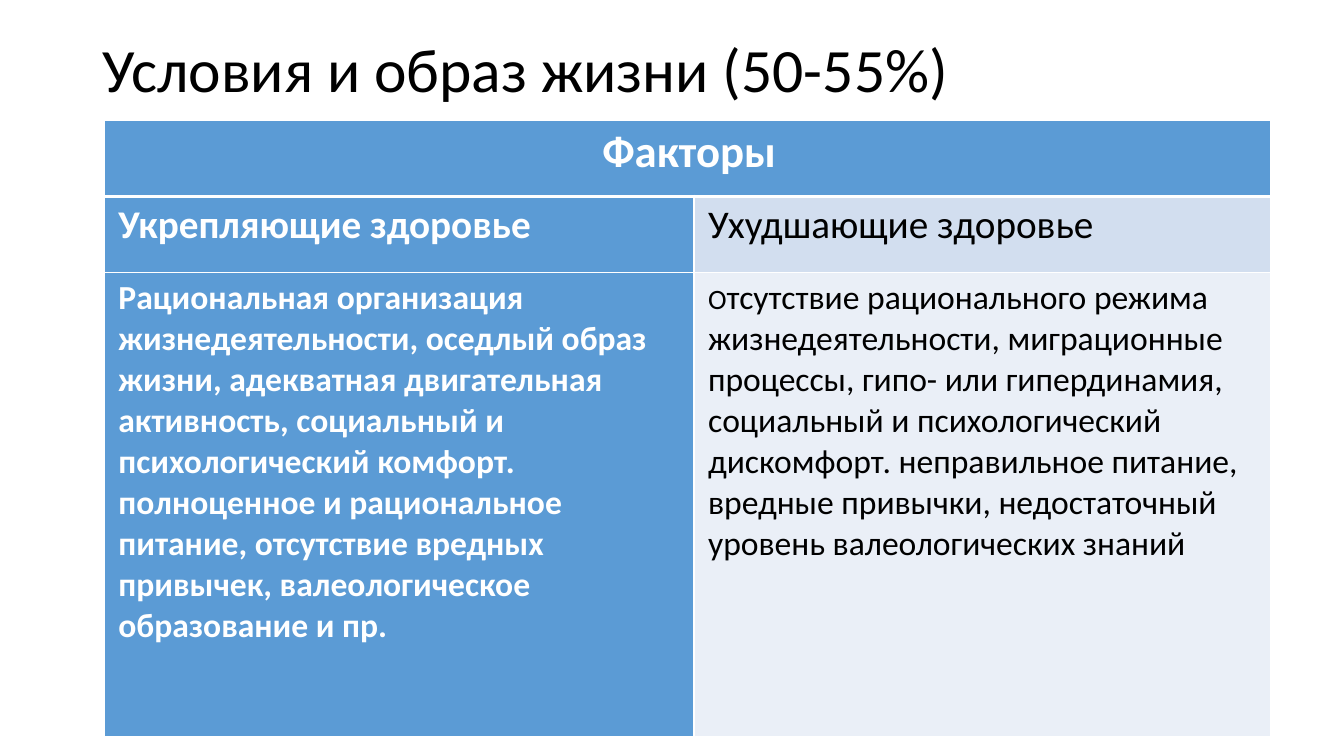
from pptx import Presentation
from pptx.dml.color import RGBColor
from pptx.enum.text import MSO_ANCHOR, PP_ALIGN
from pptx.oxml import parse_xml
from pptx.oxml.ns import nsdecls
from pptx.util import Cm, Pt

MIDDLE = MSO_ANCHOR.MIDDLE
LEFT, CENTER = PP_ALIGN.LEFT, PP_ALIGN.CENTER
BLACK = RGBColor(0x00, 0x00, 0x00)
WHITE = RGBColor(0xFF, 0xFF, 0xFF)
BLUE = RGBColor(0x5B, 0x9B, 0xD5)
PALE = RGBColor(0xD2, 0xDE, 0xEF)
PALER = RGBColor(0xEA, 0xEF, 0xF7)
FONT = "Calibri"

TITLE = "Условия и образ жизни (50-55%)"
HEADER = "Факторы"
COLUMNS = ["Укрепляющие здоровье", "Ухудшающие здоровье"]
STRENGTHENING = (
    "Рациональная организация жизнедеятельности, оседлый образ жизни, "
    "адекватная двигательная активность, социальный и психологический комфорт. "
    "полноценное и рациональное питание, отсутствие вредных привычек, "
    "валеологическое образование и пр."
)
WORSENING_INITIAL = "О"
WORSENING = (
    "тсутствие рационального режима жизнедеятельности, миграционные процессы, "
    "гипо- или гипердинамия, социальный и психологический дискомфорт. "
    "неправильное питание, вредные привычки, недостаточный уровень "
    "валеологических знаний"
)
ROWS = [
    {"texts": [[HEADER], [""]], "size": 32, "space": 0, "align": CENTER,
     "fills": [BLUE, BLUE], "bottom": 3},
    {"texts": [[COLUMNS[0]], [COLUMNS[1]]], "size": 28, "space": 0, "align": LEFT,
     "fills": [BLUE, PALE], "bottom": 1},
    {"texts": [[STRENGTHENING], [WORSENING_INITIAL, WORSENING]], "size": 24, "space": 3,
     "align": LEFT, "fills": [BLUE, PALER], "bottom": 1},
]
COL_WIDTHS = [Cm(14.86), Cm(14.52)]
ROW_HEIGHTS = [Cm(1.92), Cm(1.92), Cm(11.68)]


def set_borders(cell, widths):
    tcPr = cell._tc.get_or_add_tcPr()
    for i, (side, width) in enumerate(widths.items()):
        tcPr.insert(i, parse_xml(
            f'<a:ln{side} {nsdecls("a")} w="{Pt(width)}"><a:solidFill>'
            f'<a:srgbClr val="{WHITE}"/></a:solidFill></a:ln{side}>'))


def fill_cell(cell, row, col, top):
    fill = row["fills"][col]
    cell.fill.solid()
    cell.fill.fore_color.rgb = fill
    set_borders(cell, {"L": 1, "R": 1, "T": top, "B": row["bottom"]})
    p = cell.text_frame.paragraphs[0]
    p.alignment = row["align"]
    p.space_before = p.space_after = Pt(row["space"])
    p._p.get_or_add_pPr().set("marL", str(Cm(0.1)))
    p.font.name = FONT
    p.font.size = Pt(row["size"])
    p.font.bold = fill == BLUE
    p.font.color.rgb = WHITE if fill == BLUE else BLACK
    for text in row["texts"][col]:
        if text:
            r = p.add_run()
            r.text = text
            if text == WORSENING_INITIAL:
                r.font.size = Pt(20)


prs = Presentation()
prs.slide_width, prs.slide_height = Cm(33.87), Cm(19.05)
s = prs.slides.add_slide(prs.slide_layouts[6])

title = s.shapes.add_textbox(Cm(2.33), Cm(0), Cm(29.21), Cm(3.68))
tf = title.text_frame
tf.word_wrap = True
tf.vertical_anchor = MIDDLE
p = tf.paragraphs[0]
p.text = TITLE
p.line_spacing = 0.9
p.font.name = FONT
p.font.size = Pt(44)
p.font.color.rgb = BLACK

table = s.shapes.add_table(len(ROWS), len(COLUMNS), Cm(2.63), Cm(3.03),
                           sum(COL_WIDTHS), sum(ROW_HEIGHTS)).table
for column, width in zip(table.columns, COL_WIDTHS):
    column.width = width
for table_row, height in zip(table.rows, ROW_HEIGHTS):
    table_row.height = height
table.cell(0, 0).merge(table.cell(0, 1))

top = 1
for i, row in enumerate(ROWS):
    for j in range(len(COLUMNS)):
        fill_cell(table.cell(i, j), row, j, top)
    top = row["bottom"]

prs.save("out.pptx")
